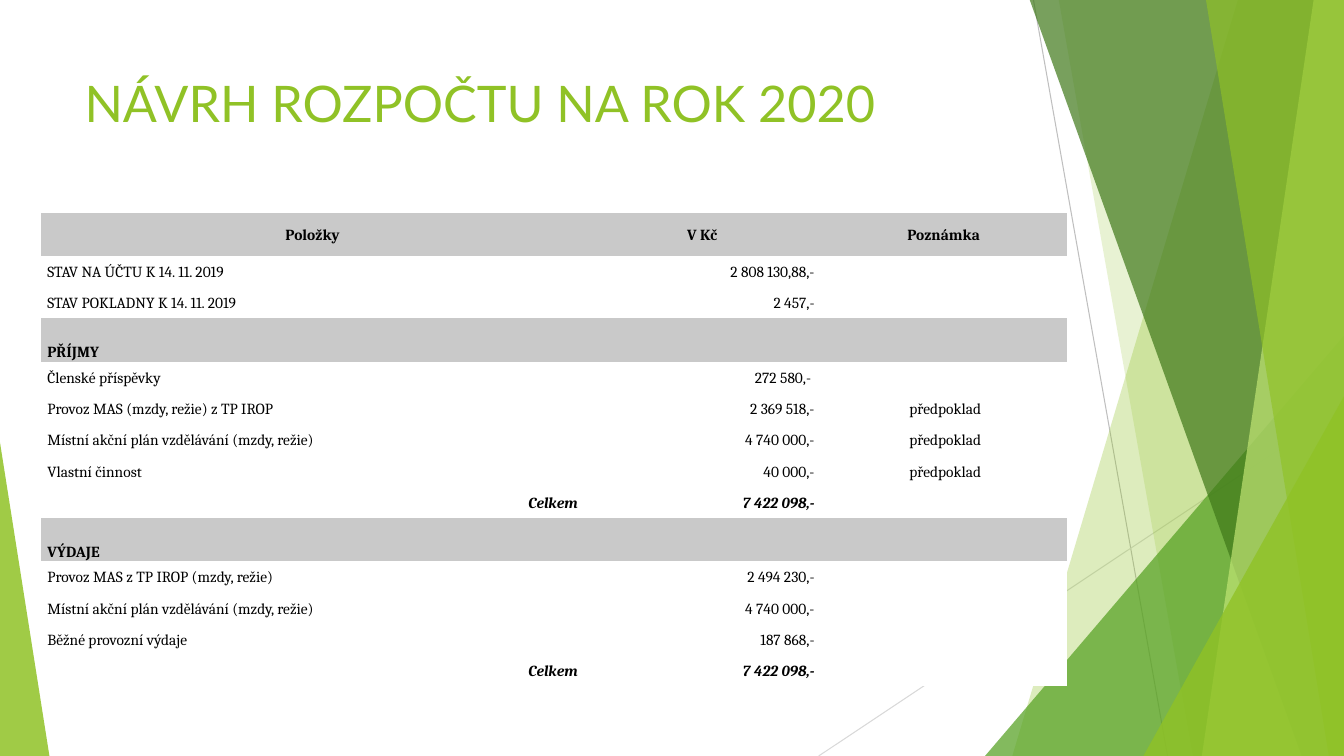
from dataclasses import dataclass

from lxml import etree
from pptx import Presentation
from pptx.dml.color import RGBColor
from pptx.enum.shapes import MSO_CONNECTOR, MSO_SHAPE
from pptx.enum.text import MSO_ANCHOR, PP_ALIGN
from pptx.oxml.ns import qn
from pptx.util import Inches, Pt

STRAIGHT = MSO_CONNECTOR.STRAIGHT
TRIANGLE = MSO_SHAPE.ISOSCELES_TRIANGLE
TOP, MIDDLE, BOTTOM = MSO_ANCHOR.TOP, MSO_ANCHOR.MIDDLE, MSO_ANCHOR.BOTTOM
LEFT, CENTER, RIGHT = PP_ALIGN.LEFT, PP_ALIGN.CENTER, PP_ALIGN.RIGHT

WHITE = RGBColor(0xFF, 0xFF, 0xFF)
BLACK = RGBColor(0x00, 0x00, 0x00)
HEADING_GRAY = RGBColor(0xC9, 0xC9, 0xC9)
LINE_GRAY = RGBColor(0xBF, 0xBF, 0xBF)
PALE_GRAY = RGBColor(0xD9, 0xD9, 0xD9)
LIME = RGBColor(0x90, 0xC2, 0x26)
GREEN = RGBColor(0x54, 0xA0, 0x21)
DARK_GREEN = RGBColor(0x3F, 0x78, 0x19)
LIGHT_LIME = RGBColor(0xC0, 0xE4, 0x74)

SLIDE_WIDTH, SLIDE_HEIGHT = 13.33, 7.5
PLAIN_TABLE_STYLE = "{2D5ABB26-0587-4C30-8999-92F81FD0307C}"
COLUMN_WIDTHS = (5.38, 2.35, 2.44)
ITEM_HEIGHT, HEADING_HEIGHT = 0.31, 0.43
TEXT_SIZE = Pt(11)


@dataclass(frozen=True)
class Ray:
    start_x: float
    start_y: float
    end_x: float
    color: RGBColor


@dataclass(frozen=True)
class Band:
    top_x: float
    bottom_x: float
    color: RGBColor
    opacity: int


@dataclass(frozen=True)
class Corner:
    left: float
    top: float
    width: float
    apex: float
    color: RGBColor
    opacity: int


@dataclass(frozen=True)
class RowStyle:
    height: float = ITEM_HEIGHT
    fill: RGBColor = WHITE
    anchor: MSO_ANCHOR = MIDDLE
    alignments: tuple[PP_ALIGN, ...] = (LEFT, RIGHT, CENTER)
    bold: bool = False
    italic: bool = False


@dataclass(frozen=True)
class BudgetRow:
    label: str
    amount: str = ""
    note: str = ""
    style: RowStyle = RowStyle()


HEADER = RowStyle(HEADING_HEIGHT, HEADING_GRAY, alignments=(CENTER,) * 3, bold=True)
SECTION = RowStyle(HEADING_HEIGHT, HEADING_GRAY, BOTTOM, bold=True)
TOTAL = RowStyle(alignments=(RIGHT, RIGHT, CENTER), bold=True, italic=True)

RAYS = (
    Ray(10.25, 0, 11.58, LINE_GRAY),
    Ray(SLIDE_WIDTH, 4.03, 8.12, PALE_GRAY),
)
FACETS = (
    Band(12.28, 10.04, LIME, 30),
    Band(10.5, 11.83, LIME, 20),
    Corner(9.77, 3.33, 3.56, 1, GREEN, 72),
    Band(10.21, 12.91, DARK_GREEN, 70),
    Band(13.03, 11.92, LIGHT_LIME, 70),
    Band(11.96, 13.18, LIME, 65),
    Corner(11.34, 3.93, 1.99, 1, LIME, 80),
    Corner(0, 4.39, 0.49, 0, LIME, 85),
)
BUDGET = (
    BudgetRow("Položky", "V Kč", "Poznámka", HEADER),
    BudgetRow("STAV NA ÚČTU K 14. 11. 2019", "2 808 130,88,-"),
    BudgetRow("STAV POKLADNY K 14. 11. 2019", "2 457,-"),
    BudgetRow("PŘÍJMY", style=SECTION),
    BudgetRow("Členské příspěvky", "272 580,- "),
    BudgetRow("Provoz MAS (mzdy, režie) z TP IROP", "2 369 518,-", " předpoklad"),
    BudgetRow("Místní akční plán vzdělávání (mzdy, režie)", "4 740 000,-", " předpoklad"),
    BudgetRow("Vlastní činnost", "40 000,-", " předpoklad"),
    BudgetRow("Celkem", "7 422 098,-", style=TOTAL),
    BudgetRow("VÝDAJE", style=SECTION),
    BudgetRow("Provoz MAS z TP IROP (mzdy, režie)", "2 494 230,-"),
    BudgetRow("Místní akční plán vzdělávání (mzdy, režie)", "4 740 000,-"),
    BudgetRow("Běžné provozní výdaje", "187 868,-"),
    BudgetRow("Celkem", "7 422 098,-", style=TOTAL),
)


def draw_ray(slide, ray: Ray) -> None:
    connector = slide.shapes.add_connector(
        STRAIGHT, Inches(ray.start_x), Inches(ray.start_y),
        Inches(ray.end_x), Inches(SLIDE_HEIGHT))
    connector.line.color.rgb = ray.color
    connector.line.width = Pt(0.75)
    etree.SubElement(connector._element.spPr, qn("a:effectLst"))


def draw_facet(slide, facet: Band | Corner) -> None:
    if isinstance(facet, Band):
        builder = slide.shapes.build_freeform(Inches(facet.top_x), Inches(-0.01))
        builder.add_line_segments([
            (Inches(SLIDE_WIDTH), Inches(-0.01)),
            (Inches(SLIDE_WIDTH), Inches(SLIDE_HEIGHT)),
            (Inches(facet.bottom_x), Inches(SLIDE_HEIGHT)),
        ], close=True)
        shape = builder.convert_to_shape()
    else:
        shape = slide.shapes.add_shape(
            TRIANGLE, Inches(facet.left), Inches(facet.top),
            Inches(facet.width), Inches(SLIDE_HEIGHT - facet.top))
        shape.adjustments[0] = facet.apex
    shape.shadow.inherit = False
    shape.line.fill.background()
    shape.fill.solid()
    shape.fill.fore_color.rgb = facet.color
    color = shape._element.spPr.find(qn("a:solidFill")).find(qn("a:srgbClr"))
    etree.SubElement(color, qn("a:alpha"), val=str(facet.opacity * 1000))


def draw_title(slide, text: str) -> None:
    box = slide.shapes.add_textbox(Inches(0.74), Inches(0.67), Inches(9.4), Inches(1.44))
    frame = box.text_frame
    frame.word_wrap = True
    frame.vertical_anchor = TOP
    run = frame.paragraphs[0].add_run()
    run.text = text
    run.font.name = "Lato"
    run.font.size = Pt(36)
    run.font.color.rgb = LIME


def fill_cell(cell, text: str, alignment: PP_ALIGN, style: RowStyle) -> None:
    cell.fill.solid()
    cell.fill.fore_color.rgb = style.fill
    cell.vertical_anchor = style.anchor
    cell.margin_left = cell.margin_right = Inches(0.06)
    cell.margin_top, cell.margin_bottom = Inches(0.01), 0
    paragraph = cell.text_frame.paragraphs[0]
    paragraph.alignment = alignment
    paragraph.line_spacing = 1.05
    if not text:
        etree.SubElement(paragraph._p, qn("a:endParaRPr"), sz=str(int(TEXT_SIZE.pt * 100)))
        return
    run = paragraph.add_run()
    run.text = text
    run.font.name = "Cambria"
    run.font.size = TEXT_SIZE
    run.font.color.rgb = BLACK
    run.font.bold = style.bold
    run.font.italic = style.italic


def draw_budget(slide, rows: tuple[BudgetRow, ...]) -> None:
    height = sum(row.style.height for row in rows)
    frame = slide.shapes.add_table(
        len(rows), len(COLUMN_WIDTHS), Inches(0.41), Inches(2.11),
        Inches(sum(COLUMN_WIDTHS)), Inches(height))
    table = frame.table
    table.first_row = table.horz_banding = False
    table._tbl.tblPr.find(qn("a:tableStyleId")).text = PLAIN_TABLE_STYLE
    for column, width in zip(table.columns, COLUMN_WIDTHS):
        column.width = Inches(width)
    for table_row, row in zip(table.rows, rows):
        table_row.height = Inches(row.style.height)
        texts = (row.label, row.amount, row.note)
        for cell, text, alignment in zip(table_row.cells, texts, row.style.alignments):
            fill_cell(cell, text, alignment, row.style)


def main() -> None:
    presentation = Presentation()
    presentation.slide_width = Inches(SLIDE_WIDTH)
    presentation.slide_height = Inches(SLIDE_HEIGHT)
    slide = presentation.slides.add_slide(presentation.slide_layouts[6])
    for ray in RAYS:
        draw_ray(slide, ray)
    for facet in FACETS:
        draw_facet(slide, facet)
    draw_title(slide, "NÁVRH ROZPOČTU NA ROK 2020")
    draw_budget(slide, BUDGET)
    presentation.save("out.pptx")


if __name__ == "__main__":
    main()
